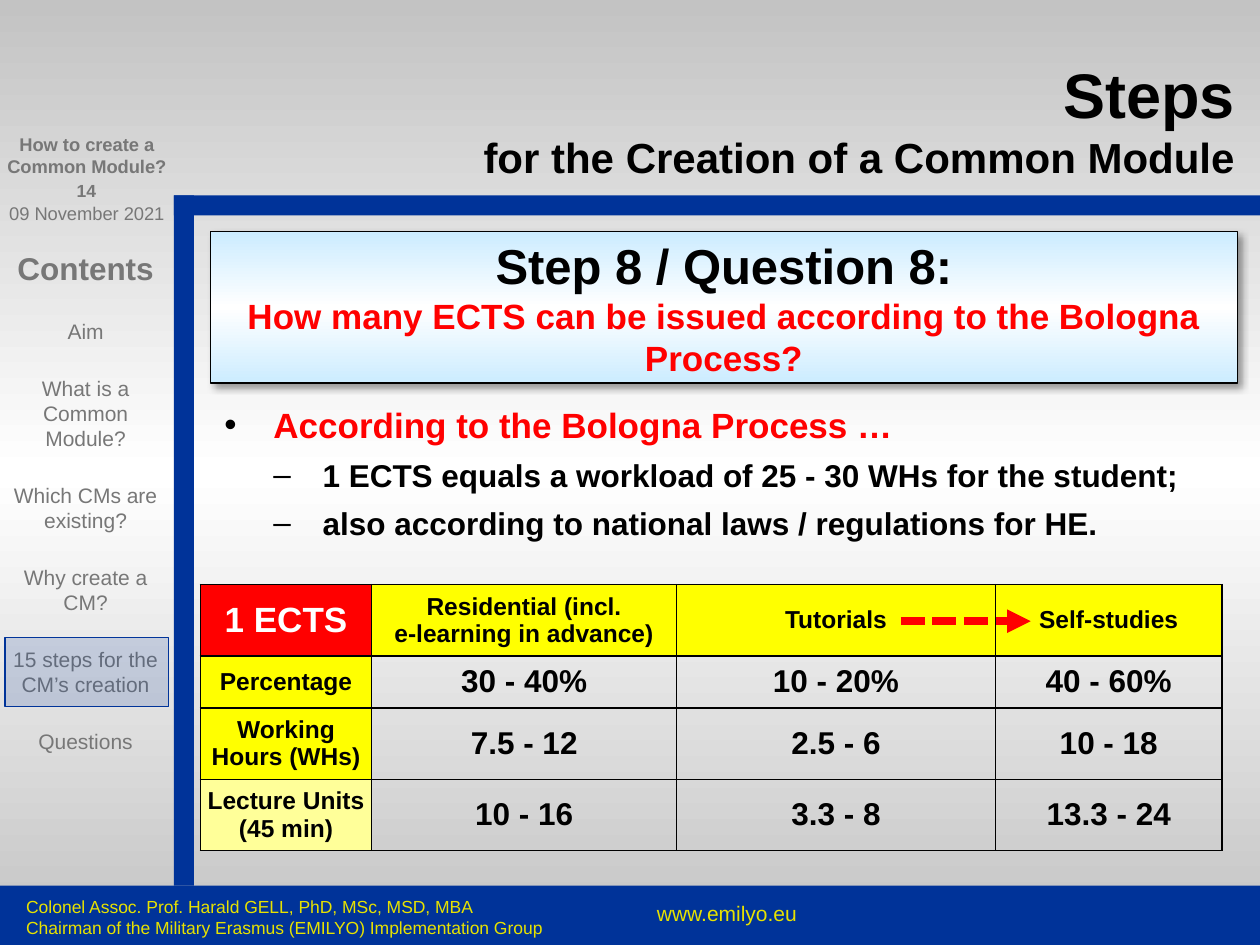
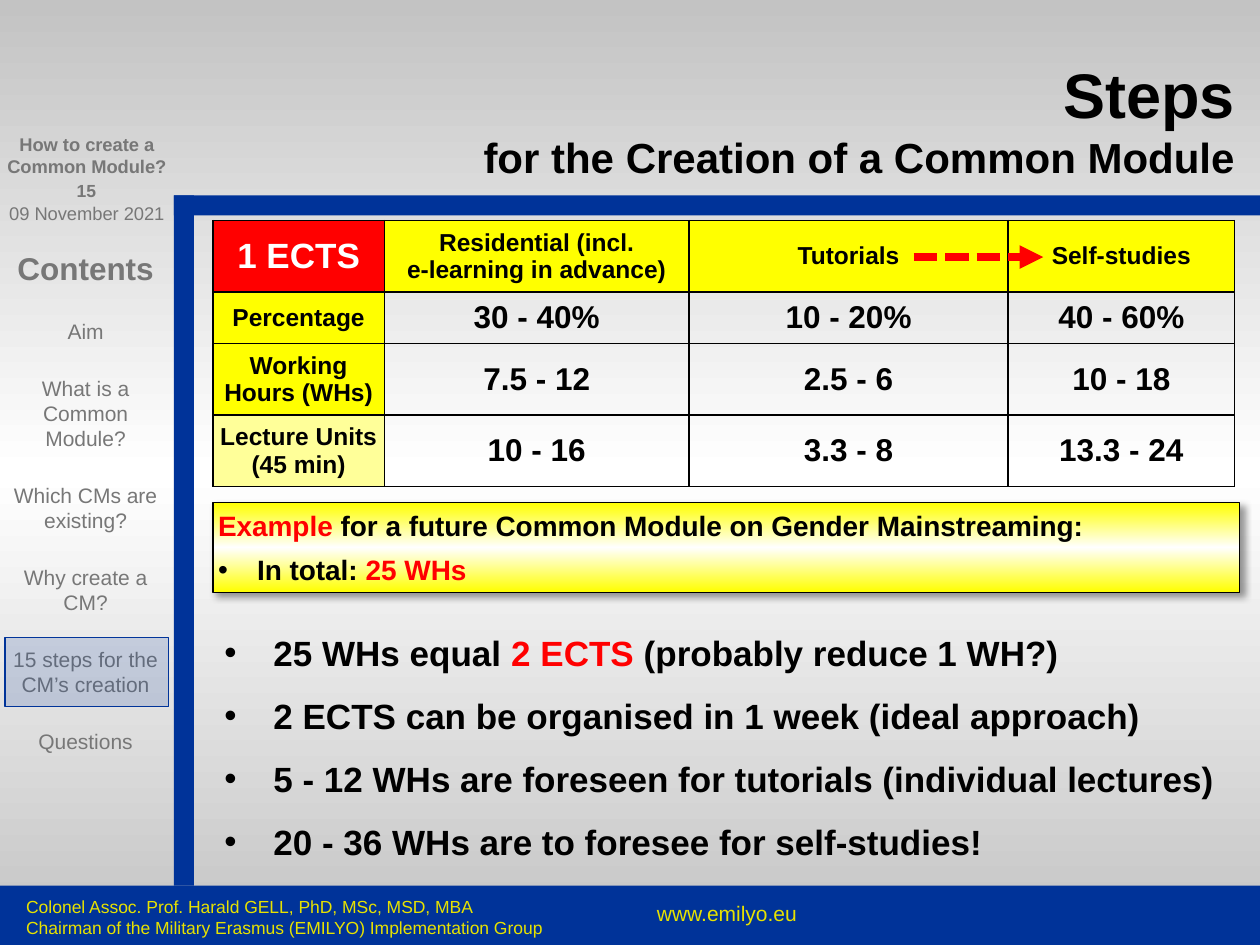
from copy import deepcopy
from itertools import accumulate
from lxml.etree import SubElement
from pptx import Presentation
from pptx.dml.color import RGBColor
from pptx.enum.dml import MSO_LINE
from pptx.enum.shapes import MSO_CONNECTOR, MSO_SHAPE
from pptx.enum.text import MSO_ANCHOR, PP_ALIGN
from pptx.oxml.ns import qn
from pptx.util import Inches, Pt

BLACK = RGBColor(0x00, 0x00, 0x00)
WHITE = RGBColor(0xFF, 0xFF, 0xFF)
RED = RGBColor(0xFF, 0x00, 0x00)
YELLOW = RGBColor(0xFF, 0xFF, 0x00)
PALE_YELLOW = RGBColor(0xFF, 0xFF, 0x99)
PALE_BLUE = RGBColor(0xCC, 0xEC, 0xFF)
BLUE = RGBColor(0x00, 0x33, 0x99)
SILVER = RGBColor(0xC3, 0xC3, 0xC3)
GREY = RGBColor(0x77, 0x77, 0x77)
GOLD = RGBColor(0xE7, 0xE2, 0x00)

FONT = "Arial"
WIDTH, HEIGHT = 10, 7.5
RAIL, BAND_TOP, BAND = 1.38, 1.55, 0.16
FOOTER_TOP = 7.03
SLIM = (0.04,) * 4
FLAT = (0, 0.04, 0, 0.04)
NONE = (0,) * 4
LEFT, CENTER, RIGHT = PP_ALIGN.LEFT, PP_ALIGN.CENTER, PP_ALIGN.RIGHT

TITLE = [("Steps\n", 36, BLACK, True), ("for the Creation of a Common Module", 24, BLACK, True)]
CONTENTS = ["Aim", "What is a Common Module?", "Which CMs are existing?",
            "Why create a CM?", "15 steps for the CM’s creation", "Questions"]
COURSE = ["How to create a", "Common Module?"]
DATE = "09 November 2021"
AUTHOR = ["Colonel Assoc. Prof. Harald GELL, PhD, MSc, MSD, MBA",
          "Chairman of the Military Erasmus (EMILYO) Implementation Group"]
SITE = "www.emilyo.eu"

WORKLOAD = [
    ["1 ECTS", "Residential (incl.\ne-learning in advance)", "Tutorials", "Self-studies"],
    ["Percentage", "30 - 40%", "10 - 20%", "40 - 60%"],
    ["Working Hours (WHs)", "7.5 - 12", "2.5 - 6", "10 - 18"],
    ["Lecture Units (45 min)", "10 - 16", "3.3 - 8", "13.3 - 24"],
]
COLUMNS = [1.36, 2.42, 2.53, 1.8]
ROWS = [0.54, 0.41, 0.54, 0.54]

QUESTION = [("Step 8 / Question 8:\n", 28, BLACK, True),
            ("How many ECTS can be issued according to the Bologna Process?", 20, RED, True)]
BOLOGNA = [
    (0, "•", [("According to the Bologna Process …", 20, RED, True)]),
    (1, "–", [("1 ECTS equals a workload of 25 - 30 WHs for the student;", 18, BLACK, True)]),
    (1, "–", [("also according to national laws / regulations for HE.", 18, BLACK, True)]),
]
EXAMPLE = [("Example ", 16, RED, True),
           ("for a future Common Module on Gender Mainstreaming:", 16, BLACK, True)]
TOTAL = [("In total: ", 16, BLACK, True), ("25 WHs", 16, RED, True)]
FINDINGS = [
    [("25 WHs equal ", 20, BLACK, True), ("2 ECTS ", 20, RED, True),
     ("(probably reduce 1 WH?)", 20, BLACK, True)],
    [("2 ECTS can be organised in 1 week (ideal approach)", 20, BLACK, True)],
    [("5 - 12 WHs are foreseen for tutorials (individual lectures)", 20, BLACK, True)],
    [("20 - 36 WHs are to foresee for self-studies!", 20, BLACK, True)],
]


def apply(target, **values):
    for name, value in values.items():
        setattr(target, name, value)


def paragraph(runs, align=LEFT, **more):
    return dict(runs=runs, align=align, **more)


def add_bullet(para, mark, level, indent):
    props = para._p.get_or_add_pPr()
    props.set("marL", str(Inches(indent * (level + 1))))
    props.set("indent", str(-Inches(indent)))
    color = SubElement(props, qn("a:buClr"))
    SubElement(color, qn("a:srgbClr"), val=str(BLACK))
    SubElement(props, qn("a:buFont"), typeface=FONT)
    SubElement(props, qn("a:buChar"), char=mark)


def add_span(para, text, size, color, bold):
    span = para.add_run()
    span.text = text
    apply(span.font, name=FONT, size=Pt(size), bold=bold)
    span.font.color.rgb = color
    return span


def write(frame, paragraphs):
    for number, item in enumerate(paragraphs):
        para = frame.add_paragraph() if number else frame.paragraphs[0]
        if "mark" in item:
            add_bullet(para, item["mark"], item.get("level", 0), item["indent"])
        apply(para, alignment=item["align"], level=item.get("level", 0),
              space_before=Pt(item.get("before", 0)), space_after=Pt(item.get("after", 0)))
        for text, *style in item["runs"]:
            lines = text.split("\n")
            for position, line in enumerate(lines):
                if line:
                    span = add_span(para, line, *style)
                if position < len(lines) - 1:
                    para.add_line_break()
                    span._r.getnext().append(deepcopy(span._r.rPr))


def fill_frame(frame, paragraphs, insets=(0.1, 0.05, 0.1, 0.05), anchor=MSO_ANCHOR.TOP, wrap=True):
    left, top, right, bottom = map(Inches, insets)
    apply(frame, word_wrap=wrap, vertical_anchor=anchor, margin_left=left,
          margin_top=top, margin_right=right, margin_bottom=bottom)
    write(frame, paragraphs)


def add_text(page, place, paragraphs, **layout):
    box = page.shapes.add_textbox(*map(Inches, place))
    fill_frame(box.text_frame, paragraphs, **layout)


def add_block(page, place, color=None, line=None):
    box = page.shapes.add_shape(MSO_SHAPE.RECTANGLE, *map(Inches, place))
    box.shadow.inherit = False
    if color is not None:
        box.fill.solid()
        box.fill.fore_color.rgb = color
    if line is None:
        box.line.fill.background()
    else:
        box.line.color.rgb = line
        box.line.width = Pt(0.75)
    return box


def blend(owner, fill, edge, middle=WHITE):
    fill.gradient()
    fill.gradient_angle = 270
    for stop, color, position in zip(fill.gradient_stops, (edge, middle), (0, 0.5)):
        stop.color.rgb = color
        stop.position = position
    stops = owner.element.find(".//" + qn("a:gsLst"))
    last = deepcopy(stops[0])
    last.set("pos", "100000")
    stops.append(last)


def add_panel(page, place, edge, paragraphs, insets):
    box = add_block(page, place, line=BLACK)
    blend(box, box.fill, edge)
    effects = box.element.spPr.find(qn("a:effectLst"))
    shadow = SubElement(effects, qn("a:outerShdw"), blurRad=str(Pt(4)), dist=str(Pt(3)),
                        dir="2700000", algn="tl", rotWithShape="0")
    color = SubElement(shadow, qn("a:srgbClr"), val=str(BLACK))
    SubElement(color, qn("a:alpha"), val="40000")
    fill_frame(box.text_frame, paragraphs, insets=insets, anchor=MSO_ANCHOR.MIDDLE)


def add_borders(cell):
    props = cell._tc.get_or_add_tcPr()
    for position, side in enumerate(("a:lnL", "a:lnR", "a:lnT", "a:lnB")):
        line = props.makeelement(qn(side), {"w": str(Pt(1))})
        SubElement(SubElement(line, qn("a:solidFill")), qn("a:srgbClr"), val=str(BLACK))
        props.insert(position, line)


def cell_style(row, column):
    if row == column == 0:
        return RED, 20, WHITE
    if row and column:
        return None, 18, BLACK
    return (PALE_YELLOW if row == len(ROWS) - 1 else YELLOW), 14, BLACK


def add_workload(page, left, top):
    frame = page.shapes.add_table(len(ROWS), len(COLUMNS), Inches(left), Inches(top),
                                  Inches(sum(COLUMNS)), Inches(sum(ROWS)))
    table = frame.table
    apply(table, first_row=False, horz_banding=False)
    for column, width in zip(table.columns, COLUMNS):
        column.width = Inches(width)
    for row, height in zip(table.rows, ROWS):
        row.height = Inches(height)
    for row, texts in enumerate(WORKLOAD):
        for column, text in enumerate(texts):
            cell = table.cell(row, column)
            fill, size, color = cell_style(row, column)
            apply(cell, vertical_anchor=MSO_ANCHOR.MIDDLE, margin_left=Inches(0.04),
                  margin_right=Inches(0.04), margin_top=Inches(0.05), margin_bottom=Inches(0.05))
            if fill is None:
                cell.fill.background()
            else:
                cell.fill.solid()
                cell.fill.fore_color.rgb = fill
            add_borders(cell)
            write(cell.text_frame, [paragraph([(text, size, color, True)], CENTER)])


def add_shift_arrow(page, left, top):
    edge = left + list(accumulate(COLUMNS))[2]
    start, end, middle = map(Inches, (edge - 0.75, edge + 0.28, top + 0.29))
    arrow = page.shapes.add_connector(MSO_CONNECTOR.STRAIGHT, start, middle, end, middle)
    arrow.line.color.rgb = RED
    apply(arrow.line, width=Pt(4.5), dash_style=MSO_LINE.SQUARE_DOT)
    SubElement(arrow.line._get_or_add_ln(), qn("a:tailEnd"), type="triangle")
    SubElement(arrow.element.spPr, qn("a:effectLst"))


def add_page(deck, number):
    page = deck.slides.add_slide(deck.slide_layouts[6])
    blend(page, page.background.fill, SILVER)
    add_block(page, (RAIL, BAND_TOP, BAND, FOOTER_TOP - BAND_TOP), BLUE)
    add_block(page, (RAIL, BAND_TOP, WIDTH - RAIL, BAND), BLUE)
    add_text(page, (0.44, 1.38, 0.49, 0.27),
             [paragraph([(str(number), 10, GREY, True)], CENTER)], wrap=False)
    menu = [("Contents", 18, GREY, True)] + [(entry, 12, GREY, False) for entry in CONTENTS]
    add_text(page, (0.05, 1.94, 1.26, 5.04),
             [paragraph([entry], CENTER, after=18) for entry in menu], insets=SLIM)
    course = [paragraph([(line, 10.5, GREY, True)], CENTER) for line in COURSE]
    date = paragraph([(DATE, 10.5, GREY, False)], CENTER, before=13.8)
    add_text(page, (0, 1.06, RAIL, 0.82), course + [date], insets=NONE)
    add_block(page, (0, FOOTER_TOP, WIDTH, HEIGHT - FOOTER_TOP), BLUE)
    add_text(page, (4.88, 7.1, 1.78, 0.35), [paragraph([(SITE, 12, GOLD, False)], CENTER)])
    add_text(page, (0.11, 7.06, 4.6, 0.35),
             [paragraph([(line, 10, GOLD, False)]) for line in AUTHOR])
    add_text(page, (RAIL, 0.19, 8.42, 1.25), [paragraph(TITLE, RIGHT)],
             insets=NONE, anchor=MSO_ANCHOR.BOTTOM)
    return page


def mark_chapter(page):
    box = add_block(page, (0.04, 5.06, 1.3, 0.55), BLUE, BLUE)
    color = box.element.spPr.find(qn("a:solidFill"))[0]
    SubElement(color, qn("a:alpha"), val="16000")


def build_question(deck):
    page = add_page(deck, 14)
    add_panel(page, (1.67, 1.84, 8.15, 1.2), PALE_BLUE,
              [paragraph(QUESTION, CENTER, after=6)], FLAT)
    add_workload(page, 1.59, 4.64)
    add_text(page, (1.78, 3.16, 7.99, 1.22),
             [paragraph(runs, mark=mark, level=level, indent=0.39, after=6)
              for level, mark, runs in BOLOGNA], insets=FLAT)
    add_shift_arrow(page, 1.59, 4.64)
    mark_chapter(page)


def build_example(deck):
    page = add_page(deck, 15)
    add_workload(page, 1.69, 1.75)
    add_shift_arrow(page, 1.69, 1.75)
    add_panel(page, (1.69, 3.99, 8.15, 0.71), YELLOW,
              [paragraph(EXAMPLE, after=6),
               paragraph(TOTAL, mark="•", indent=0.31, after=6)], SLIM)
    add_text(page, (1.78, 4.97, 7.99, 1.93),
             [paragraph(runs, mark="•", indent=0.39, after=12) for runs in FINDINGS],
             insets=FLAT)
    mark_chapter(page)


def main():
    deck = Presentation()
    apply(deck, slide_width=Inches(WIDTH), slide_height=Inches(HEIGHT))
    build_question(deck)
    build_example(deck)
    deck.save("out.pptx")


if __name__ == "__main__":
    main()
